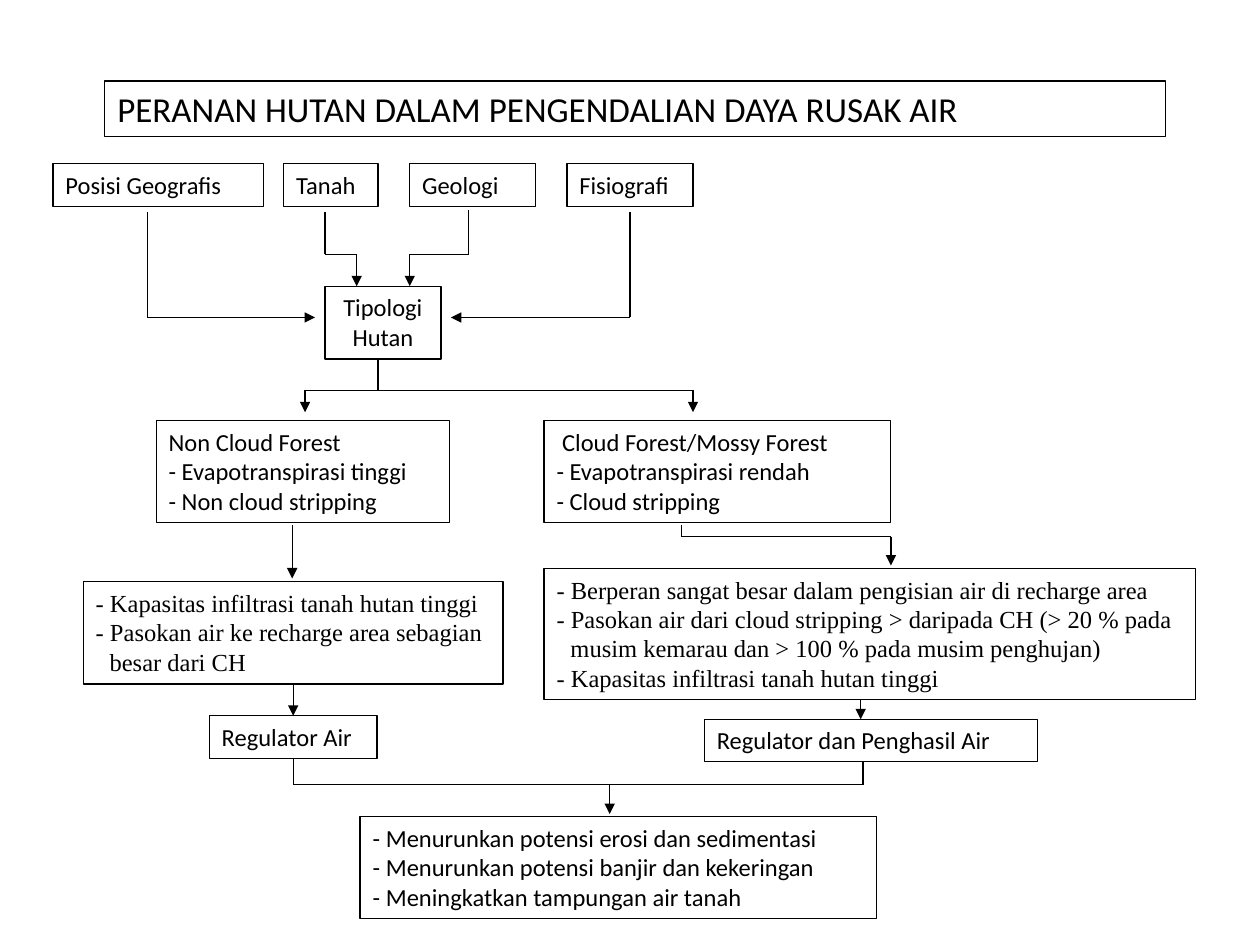
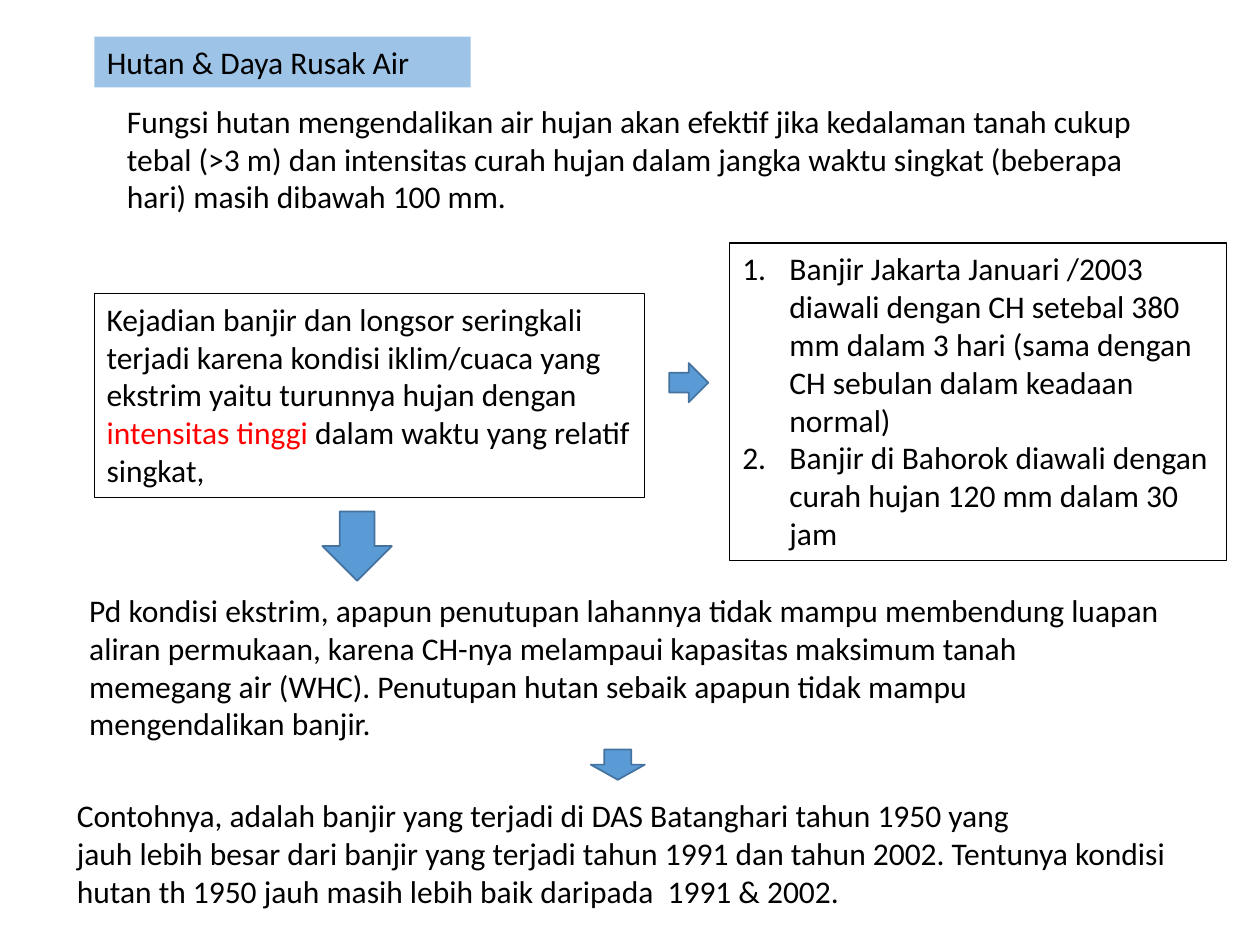
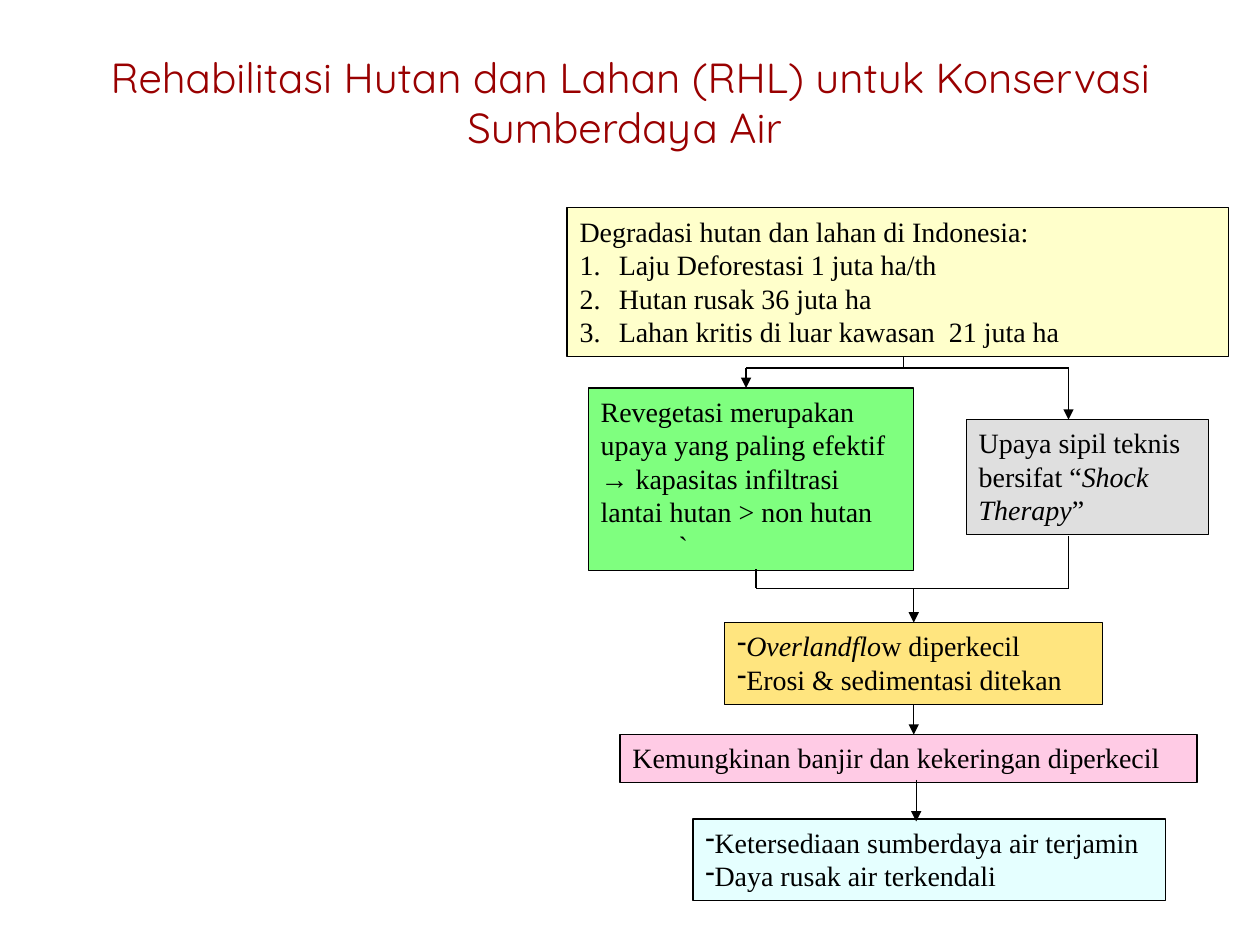
from itertools import pairwise

from pptx import Presentation
from pptx.dml.color import RGBColor
from pptx.enum.shapes import MSO_CONNECTOR, MSO_SHAPE
from pptx.enum.text import MSO_ANCHOR, MSO_AUTO_SIZE, PP_ALIGN
from pptx.oxml.ns import qn
from pptx.util import Cm, Pt
from lxml.etree import SubElement

SANS, SERIF, ROUNDED = "Calibri", "Times New Roman", "Quicksand"
BLACK, WHITE, RED, MAROON = "000000", "FFFFFF", "FF0000", "990000"
BLUE, DARK_BLUE, PALE_BLUE = "5B9BD5", "43739E", "9DC3E6"
TOP, BOTTOM = 0, 2


def colour(code):
    return RGBColor.from_string(code)


def set_bullet(para, bullet, hanging):
    properties = para._p.get_or_add_pPr()
    properties.set("marL", str(Cm(hanging)))
    properties.set("indent", str(Cm(-hanging)))
    if bullet == "1.":
        SubElement(properties, qn("a:buAutoNum"), type="arabicPeriod")
    elif bullet:
        SubElement(properties, qn("a:buChar"), char=bullet)
    else:
        SubElement(properties, qn("a:buNone"))


def write(frame, paragraphs, size=14, font=SANS, ink=BLACK, align=PP_ALIGN.LEFT,
          bullet=None, plain=0, hanging=0.0):
    frame.word_wrap = True
    frame.vertical_anchor = MSO_ANCHOR.TOP
    frame.auto_size = MSO_AUTO_SIZE.NONE
    for index, spans in enumerate(paragraphs):
        para = frame.paragraphs[0] if index == 0 else frame.add_paragraph()
        para.alignment = align
        para.space_before = Pt(0)
        set_bullet(para, bullet if index >= plain else None, hanging)
        for words, look in [(spans, {})] if isinstance(spans, str) else spans:
            span = para.add_run()
            span.text = words
            span.font.name = font
            span.font.size = Pt(size)
            span.font.italic = look.get("italic", False)
            span.font.color.rgb = colour(look.get("ink", ink))


class Board:
    def __init__(self, deck, size, font=SANS):
        self.size = size
        self.font = font
        self.page = deck.slides.add_slide(deck.slide_layouts[1])

    def paint(self, shape, fill=None, line=BLACK, width=0.75, alpha=None):
        if fill:
            shape.fill.solid()
            shape.fill.fore_color.rgb = colour(fill)
            if alpha:
                tint = shape._element.spPr.find(qn("a:solidFill"))[0]
                SubElement(tint, qn("a:alpha"), val=str(alpha * 1000))
        else:
            shape.fill.background()
        if line:
            shape.line.color.rgb = colour(line)
            shape.line.width = Pt(width)
        else:
            shape.line.fill.background()

    def fill_in(self, shape, at, paragraphs, fill, line, alpha, **form):
        shape.left, shape.top, shape.width, shape.height = map(Cm, at)
        self.paint(shape, fill, line, alpha=alpha)
        write(shape.text_frame, paragraphs, **{"size": self.size, "font": self.font, **form})
        return shape

    def title(self, at, words, fill=None, line=None, **form):
        return self.fill_in(self.page.shapes.title, at, [words], fill, line, None, **form)

    def listing(self, at, paragraphs, fill=None, alpha=None, **form):
        return self.fill_in(self.page.placeholders[1], at, paragraphs, fill, BLACK, alpha, **form)

    def box(self, at, *paragraphs, fill=WHITE, alpha=None, **form):
        box = self.page.shapes.add_shape(MSO_SHAPE.RECTANGLE, *map(Cm, at))
        box.shadow.inherit = False
        return self.fill_in(box, at, paragraphs, fill, BLACK, alpha, **form)

    def note(self, at, *paragraphs):
        note = self.page.shapes.add_textbox(*map(Cm, at))
        write(note.text_frame, paragraphs, self.size, self.font)

    def block_arrow(self, kind, at):
        arrow = self.page.shapes.add_shape(kind, *map(Cm, at))
        arrow.shadow.inherit = False
        self.paint(arrow, BLUE, DARK_BLUE, 1)

    def route(self, *points, arrow=True, source=None, target=None):
        legs = []
        for start, end in pairwise(points):
            leg = self.page.shapes.add_connector(
                MSO_CONNECTOR.STRAIGHT, *map(Cm, start + end))
            leg.line.color.rgb = colour(BLACK)
            leg.line.width = Pt(0.75)
            SubElement(leg._element.spPr, qn("a:effectLst"))
            legs.append(leg)
        if source:
            legs[0].begin_connect(source, BOTTOM)
        if target:
            legs[-1].end_connect(target, TOP)
        if arrow:
            outline = legs[-1]._element.spPr.find(qn("a:ln"))
            SubElement(outline, qn("a:tailEnd"), type="triangle")

    def fork(self, x, top, bar, *tips):
        self.route((x, top), (x, bar), arrow=False)
        for tip_x, tip_y in tips:
            self.route((x, bar), (tip_x, bar), (tip_x, tip_y))


def forest_roles(deck):
    board = Board(deck, 14)
    board.title((2.11, 1.63, 21.39, 1.12),
                "PERANAN HUTAN DALAM PENGENDALIAN DAYA RUSAK AIR", line=BLACK, size=20)
    factors = [("Posisi Geografis", 1.07, 4.24), ("Tanah", 5.72, 1.9),
               ("Geologi", 8.26, 2.54), ("Fisiografi", 11.43, 2.54)]
    for name, left, width in factors:
        board.box((left, 3.3, width, 0.86), name)
    board.box((6.55, 5.77, 2.34, 1.47), "Tipologi Hutan", align=PP_ALIGN.CENTER)
    board.box((3.15, 8.48, 5.92, 2.06), "Non Cloud Forest",
              "- Evapotranspirasi tinggi", "- Non cloud stripping")
    board.box((10.97, 8.48, 6.98, 2.06), " Cloud Forest/Mossy Forest",
              "- Evapotranspirasi rendah", "- Cloud stripping")
    effects = {"font": SERIF, "hanging": 0.28}
    infiltration = board.box(
        (1.68, 11.73, 8.46, 2.06), "- Kapasitas infiltrasi tanah hutan tinggi",
        "- Pasokan air ke recharge area sebagian besar dari CH", **effects)
    board.box((10.97, 11.46, 13.13, 2.64),
              "- Berperan sangat besar dalam pengisian air di recharge area",
              "- Pasokan air dari cloud stripping > daripada CH (> 20 % pada musim "
              "kemarau dan > 100 % pada musim penghujan)",
              "- Kapasitas infiltrasi tanah hutan tinggi", **effects)
    regulator = board.box((4.22, 14.43, 3.38, 0.86), "Regulator Air")
    board.box((14.2, 14.5, 6.71, 0.86), "Regulator dan Penghasil Air")
    board.listing((7.26, 16.46, 10.41, 2.06),
                  ["- Menurunkan potensi erosi dan sedimentasi",
                   "- Menurunkan potensi banjir dan kekeringan",
                   "- Meningkatkan tampungan air tanah"], fill=WHITE)

    board.route((2.97, 4.27), (2.97, 6.4), (6.35, 6.4))
    board.route((12.7, 4.27), (12.7, 6.4), (9.09, 6.4))
    board.route((6.55, 4.27), (6.55, 5.13), (7.19, 5.13), (7.19, 5.77))
    board.route((9.45, 4.24), (9.45, 5.13), (8.26, 5.13), (8.26, 5.77))
    board.fork(7.62, 7.24, 7.87, (6.15, 8.31), (13.97, 8.31))
    board.route((5.89, 10.59), (5.89, 11.66))
    board.route((13.74, 10.59), (13.74, 10.82), (17.96, 10.82), (17.96, 11.4))
    board.route((5.91, 13.79), (5.91, 14.43), source=infiltration, target=regulator)
    board.route((17.35, 14.1), (17.35, 14.5))
    board.route((5.91, 15.29), (5.91, 15.82), (17.4, 15.82), (17.4, 15.37),
                arrow=False, source=regulator)
    board.route((12.29, 15.82), (12.29, 16.41))


def extreme_rain(deck):
    board = Board(deck, 18)
    board.title((1.9, 0.74, 7.59, 1.02), "Hutan & Daya Rusak Air", fill=PALE_BLUE)
    board.note((2.31, 1.93, 21.41, 2.57),
               "Fungsi hutan mengendalikan air hujan akan efektif jika kedalaman tanah cukup "
               "tebal (>3 m) dan intensitas curah hujan dalam jangka waktu singkat (beberapa "
               "hari) masih dibawah 100 mm.")
    board.box((1.9, 5.92, 11.1, 4.11),
              [("Kejadian banjir dan longsor seringkali terjadi karena kondisi iklim/cuaca "
                "yang ekstrim yaitu turunnya hujan dengan ", {}),
               ("intensitas tinggi ", {"ink": RED}),
               ("dalam waktu yang relatif singkat,", {})], fill=None)
    board.listing((14.71, 4.9, 10.01, 6.4),
                  ["Banjir Jakarta Januari /2003 diawali dengan CH setebal 380 mm dalam 3 hari "
                   "(sama dengan CH sebulan dalam keadaan normal)",
                   "Banjir di Bahorok diawali dengan curah hujan 120 mm dalam 30 jam"],
                  bullet="1.", hanging=0.95)
    board.note((1.55, 11.79, 22.1, 3.33),
               "Pd kondisi ekstrim, apapun penutupan lahannya tidak mampu membendung luapan "
               "aliran permukaan, karena CH-nya melampaui kapasitas maksimum tanah memegang "
               "air (WHC). Penutupan hutan sebaik apapun tidak mampu mengendalikan banjir.")
    board.note((1.3, 15.93, 23.01, 2.57),
               "Contohnya, adalah banjir yang terjadi di DAS Batanghari tahun 1950 yang",
               "jauh lebih besar dari banjir yang terjadi tahun 1991 dan tahun 2002. Tentunya "
               "kondisi hutan th 1950 jauh masih lebih baik daripada  1991 & 2002.")
    board.block_arrow(MSO_SHAPE.RIGHT_ARROW, (13.49, 7.32, 0.79, 0.79))
    board.block_arrow(MSO_SHAPE.DOWN_ARROW, (6.5, 10.31, 1.4, 1.4))
    board.block_arrow(MSO_SHAPE.DOWN_ARROW, (11.91, 15.11, 1.09, 0.61))


def rehabilitation(deck):
    board = Board(deck, 16, SERIF)
    board.title((1.91, 0.91, 21.59, 2.59),
                "Rehabilitasi Hutan dan Lahan (RHL) untuk Konservasi Sumberdaya Air ",
                size=24, font=ROUNDED, ink=MAROON, align=PP_ALIGN.CENTER)
    board.listing((11.43, 4.19, 13.34, 3),
                  ["Degradasi hutan dan lahan di Indonesia:",
                   "Laju Deforestasi 1 juta ha/th",
                   "Hutan rusak 36 juta ha",
                   "Lahan kritis di luar kawasan  21 juta ha"],
                  fill="FFFF99", alpha=50, bullet="1.", plain=1, hanging=0.79)
    revegetation = board.box(
        (11.86, 7.82, 6.55, 3.68),
        "Revegetasi merupakan upaya yang paling efektif → kapasitas infiltrasi "
        "lantai hutan > non hutan", "`", fill="00FF00", alpha=50)
    tick = revegetation.text_frame.paragraphs[1]
    tick._p.get_or_add_pPr().set("marL", str(Cm(1.57)))
    board.box((19.48, 8.46, 4.88, 2.31),
              [("Upaya sipil teknis bersifat “", {}), ("Shock Therapy", {"italic": True}),
               ("”", {})], fill="C0C0C0", alpha=50)
    runoff = board.box((14.61, 12.55, 7.62, 1.65),
                       [("Overlandflo", {"italic": True}), ("w diperkecil", {})],
                       "Erosi & sedimentasi ditekan", fill="FFCC00", alpha=50, bullet="-")
    board.box((12.5, 14.81, 11.63, 0.97), "Kemungkinan banjir dan kekeringan diperkecil",
              fill="FF99CC", alpha=50)
    board.box((13.97, 16.51, 9.53, 1.65), "Ketersediaan sumberdaya air terjamin",
              "Daya rusak air terkendali", fill="CCFFFF", alpha=50, bullet="-")

    board.fork(18.21, 7.19, 7.42, (15.04, 7.82), (21.54, 8.46))
    board.route((15.24, 11.48), (15.24, 11.86), (21.54, 11.86), (21.54, 10.8), arrow=False)
    board.route((18.42, 11.86), (18.42, 12.55), target=runoff)
    board.route((18.42, 14.2), (18.42, 14.81), source=runoff)
    board.route((18.47, 15.72), (18.47, 16.56))


def main():
    deck = Presentation()
    deck.slide_width, deck.slide_height = Cm(25.4), Cm(19.05)
    forest_roles(deck)
    extreme_rain(deck)
    rehabilitation(deck)
    deck.save("out.pptx")


if __name__ == "__main__":
    main()
